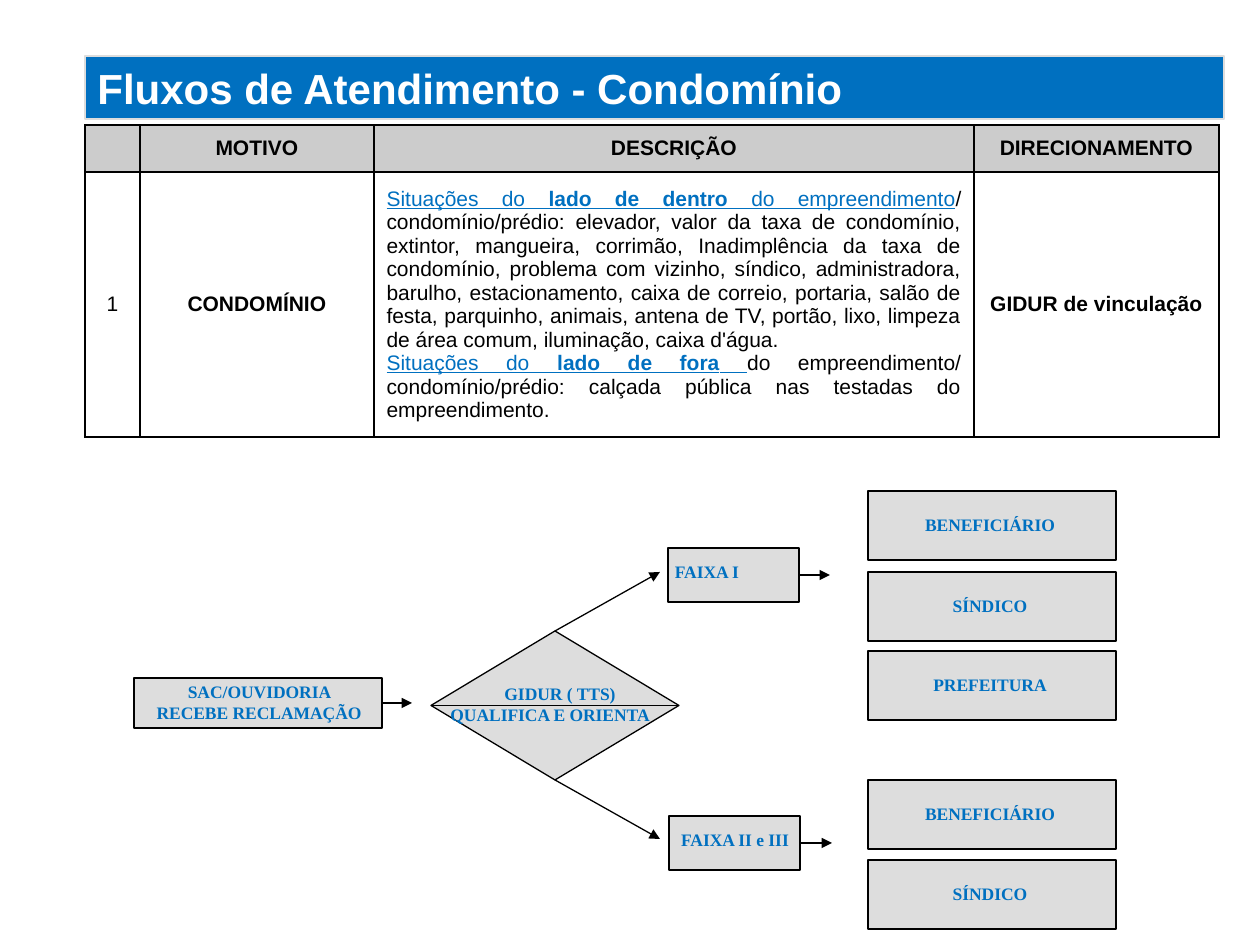
from lxml.etree import SubElement
from pptx import Presentation
from pptx.dml.color import RGBColor
from pptx.enum.shapes import MSO_CONNECTOR, MSO_SHAPE
from pptx.enum.text import MSO_ANCHOR, PP_ALIGN
from pptx.oxml import parse_xml
from pptx.oxml.ns import nsdecls, qn
from pptx.util import Pt

BLUE = RGBColor(0x00, 0x70, 0xC0)
WHITE = RGBColor(0xFF, 0xFF, 0xFF)
BLACK = RGBColor(0x00, 0x00, 0x00)
HEADER_GRAY = RGBColor(0xCC, 0xCC, 0xCC)
BOX_GRAY = RGBColor(0xDD, 0xDD, 0xDD)

TITLE = "Fluxos de Atendimento - Condomínio"
HEADERS = ["", "MOTIVO", "DESCRIÇÃO", "DIRECIONAMENTO"]
DESCRIPTION = [
    [
        ("Situações do ", True, False),
        ("lado de dentro", True, True),
        (" do empreendimento", True, False),
        ("/ condomínio/prédio: elevador, valor da taxa de condomínio, extintor, "
         "mangueira, corrimão, Inadimplência da taxa de condomínio, problema com "
         "vizinho, síndico, administradora, barulho, estacionamento, caixa de "
         "correio, portaria, salão de festa, parquinho, animais, antena de TV, "
         "portão, lixo, limpeza de área comum, iluminação, caixa d'água.", False, False),
    ],
    [
        ("Situações do ", True, False),
        ("lado de fora", True, True),
        (" ", True, False),
        ("do empreendimento/ condomínio/prédio: calçada pública nas testadas do "
         "empreendimento.", False, False),
    ],
]
COLUMN_WIDTHS = [55, 234, 600, 245]
ROW_HEIGHTS = [47, 265]

DESTINATIONS = [
    ("BENEFICIÁRIO", 491),
    ("SÍNDICO", 572),
    ("PREFEITURA", 651),
    ("BENEFICIÁRIO", 780),
    ("SÍNDICO", 860),
]
STEP_LABELS = [
    ("SAC/OUVIDORIA RECEBE RECLAMAÇÃO", 140, 675, 54),
    ("GIDUR ( TTS)", 441, 677, 34),
    ("QUALIFICA E ORIENTA", 431, 698, 34),
    ("FAIXA I", 588, 555, 34),
    ("FAIXA II e III", 616, 823, 34),
]
TOP, BOTTOM, RIGHT = 0, 2, 3


def px(length):
    return round(length * 914400 / 126)


def add_box(kind, left, top, width, height, fill=BOX_GRAY, outline=BLACK):
    box = slide.shapes.add_shape(kind, px(left), px(top), px(width), px(height))
    box.shadow.inherit = False
    box.fill.solid()
    box.fill.fore_color.rgb = fill
    box.line.color.rgb = outline
    box.line.width = Pt(0.75)
    return box


def set_font(font, name, size, color, bold):
    font.name, font.size, font.bold = name, Pt(size), bold
    font.color.rgb = color


def add_label(text, left, top, height):
    label = slide.shapes.add_textbox(px(left), px(top), px(238), px(height))
    label.text_frame.word_wrap = True
    paragraph = label.text_frame.paragraphs[0]
    paragraph.text = text
    paragraph.alignment = PP_ALIGN.CENTER
    set_font(paragraph.font, "Times New Roman", 10, BLUE, True)


def add_arrow(source, side, end_x, end_y):
    arrow = slide.shapes.add_connector(
        MSO_CONNECTOR.STRAIGHT, 0, 0, px(end_x), px(end_y))
    arrow.begin_connect(source, side)
    arrow.line.color.rgb = BLACK
    arrow.line.width = Pt(0.75)
    SubElement(arrow.line._get_or_add_ln(), qn("a:tailEnd"), type="triangle")
    SubElement(arrow._element.spPr, qn("a:effectLst"))


def style_cell(cell, fill):
    cell.vertical_anchor = MSO_ANCHOR.MIDDLE
    properties = cell._tc.get_or_add_tcPr()
    for edge in ("lnL", "lnR", "lnT", "lnB"):
        properties.append(parse_xml(
            f'<a:{edge} {nsdecls("a")} w="12700"><a:solidFill>'
            f'<a:srgbClr val="{BLACK}"/></a:solidFill></a:{edge}>'))
    cell.fill.solid()
    cell.fill.fore_color.rgb = fill


def fill_cell(cell, text, bold):
    paragraph = cell.text_frame.paragraphs[0]
    paragraph.text = text
    paragraph.alignment = PP_ALIGN.CENTER
    set_font(paragraph.font, "Arial", 12, BLACK, bold)


def fill_description(frame):
    for index, parts in enumerate(DESCRIPTION):
        paragraph = frame.add_paragraph() if index else frame.paragraphs[0]
        paragraph.alignment = PP_ALIGN.JUSTIFY
        for text, highlighted, bold in parts:
            run = paragraph.add_run()
            run.text = text
            set_font(run.font, "Arial", 12, BLUE if highlighted else BLACK, bold)
            run.font.underline = highlighted


presentation = Presentation()
presentation.slide_width, presentation.slide_height = px(1260), px(945)
slide = presentation.slides.add_slide(presentation.slide_layouts[6])

banner = add_box(MSO_SHAPE.RECTANGLE, 85, 56, 1139, 63, BLUE, BOX_GRAY)
heading = banner.text_frame.paragraphs[0]
heading.text = TITLE
heading.alignment = PP_ALIGN.LEFT
set_font(heading.font, "Arial", 24, WHITE, True)

reasons = slide.shapes.add_table(
    2, 4, px(85), px(125), px(sum(COLUMN_WIDTHS)), px(sum(ROW_HEIGHTS))).table
for column, width in zip(reasons.columns, COLUMN_WIDTHS):
    column.width = px(width)
for row, height, fill in zip(reasons.rows, ROW_HEIGHTS, (HEADER_GRAY, WHITE)):
    row.height = px(height)
    for cell in row.cells:
        style_cell(cell, fill)
for index, header in enumerate(HEADERS):
    fill_cell(reasons.cell(0, index), header, True)
fill_cell(reasons.cell(1, 0), "1", False)
fill_cell(reasons.cell(1, 1), "CONDOMÍNIO", True)
fill_description(reasons.cell(1, 2).text_frame)
fill_cell(reasons.cell(1, 3), "GIDUR de vinculação", True)

complaint = add_box(MSO_SHAPE.FLOWCHART_PROCESS, 134, 678, 248, 50)
triage = add_box(MSO_SHAPE.FLOWCHART_SORT, 431, 631, 248, 149)
band_one = add_box(MSO_SHAPE.FLOWCHART_PROCESS, 668, 548, 131, 54)
band_two = add_box(MSO_SHAPE.FLOWCHART_PROCESS, 669, 816, 131, 54)
for destination, top in DESTINATIONS:
    add_box(MSO_SHAPE.FLOWCHART_PROCESS, 868, top, 248, 69)
    add_label(destination, 871, top + 17, 34)
for step_label in STEP_LABELS:
    add_label(*step_label)

add_arrow(complaint, RIGHT, 412, 703)
add_arrow(triage, TOP, 660, 572)
add_arrow(triage, BOTTOM, 660, 839)
add_arrow(band_one, RIGHT, 830, 575)
add_arrow(band_two, RIGHT, 832, 843)

presentation.save("out.pptx")
